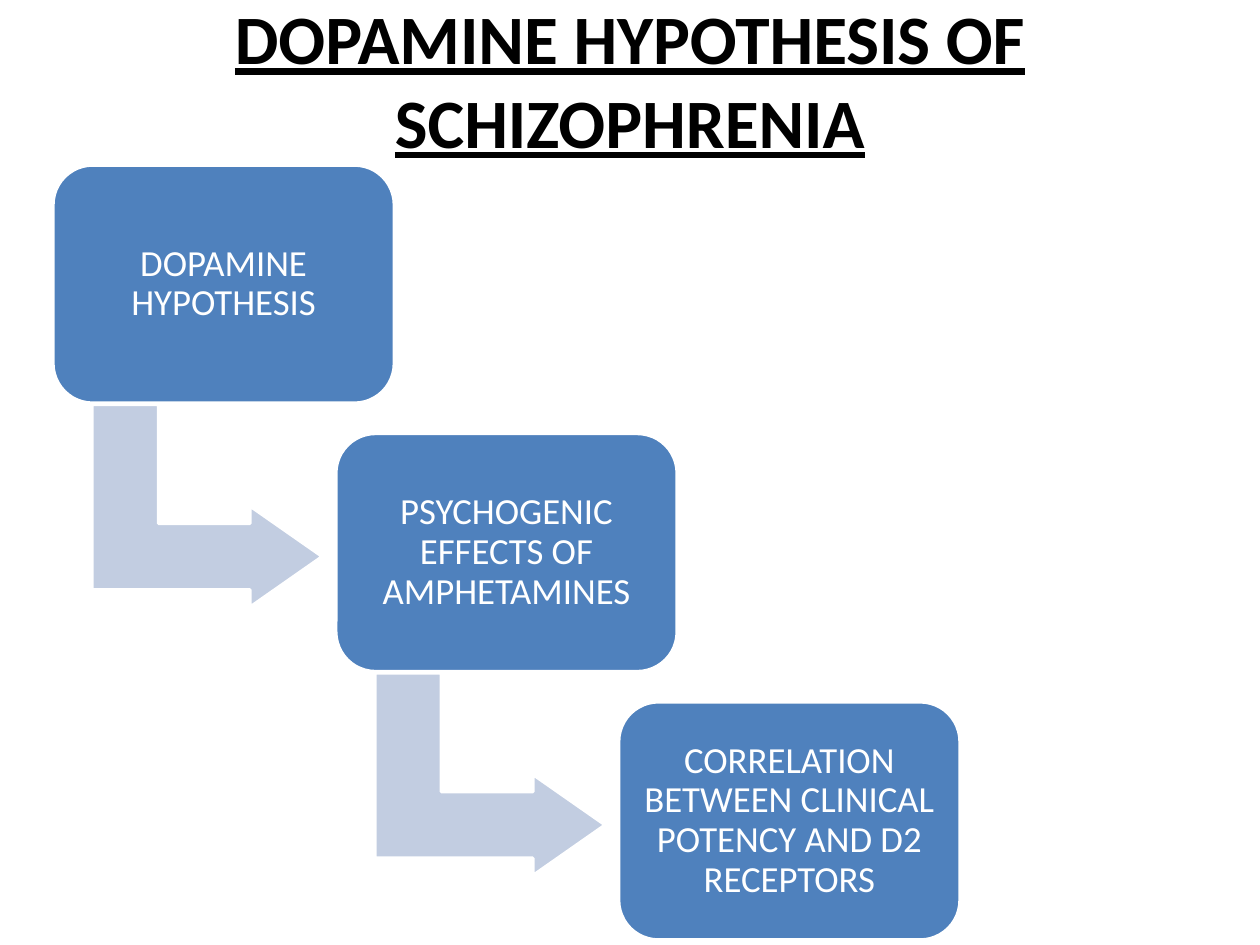
from dataclasses import dataclass

from pptx import Presentation
from pptx.dml.color import RGBColor
from pptx.enum.shapes import MSO_SHAPE as Preset
from pptx.enum.text import MSO_ANCHOR as Anchor, PP_ALIGN as Align
from pptx.util import Inches, Pt

WHITE, BLACK, BLUE, PALE_BLUE = "FFFFFF", "000000", "4F81BD", "C2CDE1"
STEP_X, STEP_Y = 2.245, 2.13


@dataclass
class Area:
    left: float
    top: float
    width: float
    height: float

    def shifted(self, steps: int) -> "Area":
        """Return the area moved down the staircase by a number of steps."""
        return Area(self.left + steps * STEP_X, self.top + steps * STEP_Y,
                    self.width, self.height)

    def lengths(self) -> list:
        return [Inches(v) for v in (self.left, self.top, self.width, self.height)]


TITLE_AREA = Area(0, 0, 10, 1.25)
FIRST_BOX = Area(0.42, 1.31, 2.71, 1.89)
FIRST_ARROW = Area(0.84, 3.1, 1.61, 1.83)
STEPS = [
    "DOPAMINE HYPOTHESIS",
    "PSYCHOGENIC EFFECTS OF AMPHETAMINES",
    "CORRELATION BETWEEN CLINICAL POTENCY AND D2 RECEPTORS",
]


def color(value: str) -> RGBColor:
    return RGBColor.from_string(value)


def write_text(box, text: str, ink: str, inset: float, spacing: float,
               font_format: dict) -> None:
    frame = box.text_frame
    frame.word_wrap = True
    frame.vertical_anchor = Anchor.MIDDLE
    for side in ("left", "right", "top", "bottom"):
        setattr(frame, f"margin_{side}", Inches(inset))
    para = frame.paragraphs[0]
    para.alignment = Align.CENTER
    para.line_spacing = spacing
    span = para.add_run()
    span.text = text
    span.font.color.rgb = color(ink)
    for name, value in font_format.items():
        setattr(span.font, name, value)


def add_block(page, preset: Preset, area: Area, fill: str, adjustments: list):
    block = page.shapes.add_shape(preset, *area.lengths())
    block.shadow.inherit = False
    block.fill.solid()
    block.fill.fore_color.rgb = color(fill)
    block.line.color.rgb = color(WHITE)
    block.line.width = Pt(2)
    for index, value in enumerate(adjustments):
        block.adjustments[index] = value
    return block


def add_step(page, index: int, text: str) -> None:
    """Draw one box of the staircase and the arrow to the next one."""
    if index < len(STEPS) - 1:
        arrow = add_block(page, Preset.BENT_UP_ARROW, FIRST_ARROW.shifted(index),
                          PALE_BLUE, [0.328, 0.25, 0.358])
        arrow.rotation = 90
    box = add_block(page, Preset.ROUNDED_RECTANGLE, FIRST_BOX.shifted(index),
                    BLUE, [0.167])
    write_text(box, text, WHITE, 0.09, 0.9, {"name": "Calibri", "size": Pt(21)})


def main() -> None:
    deck = Presentation()
    deck.slide_width, deck.slide_height = Inches(10), Inches(7.5)
    page = deck.slides.add_slide(deck.slide_layouts[6])
    title = page.shapes.add_textbox(*TITLE_AREA.lengths())
    write_text(title, "DOPAMINE HYPOTHESIS OF SCHIZOPHRENIA", BLACK, 0.1, 1.0,
               {"name": "Calibri", "size": Pt(39.6), "bold": True, "underline": True})
    for index, text in enumerate(STEPS):
        add_step(page, index, text)
    deck.save("out.pptx")


if __name__ == "__main__":
    main()
